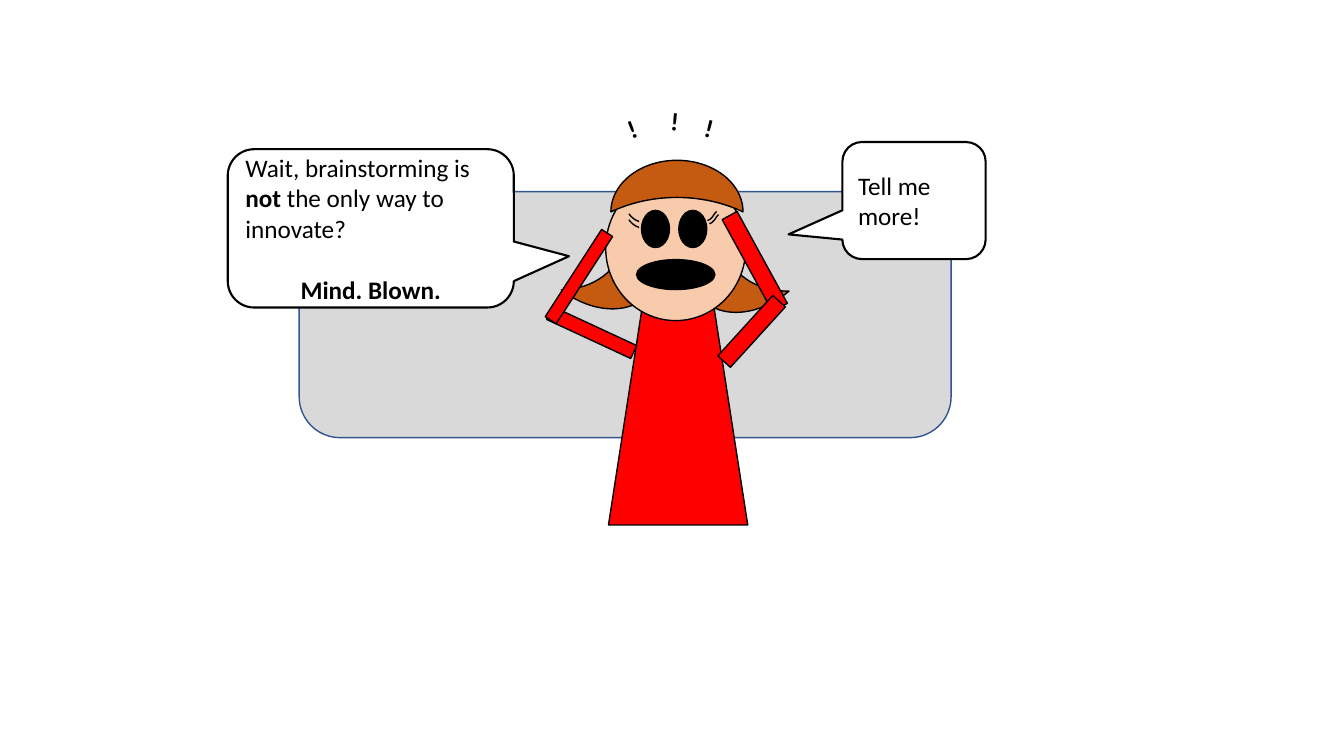
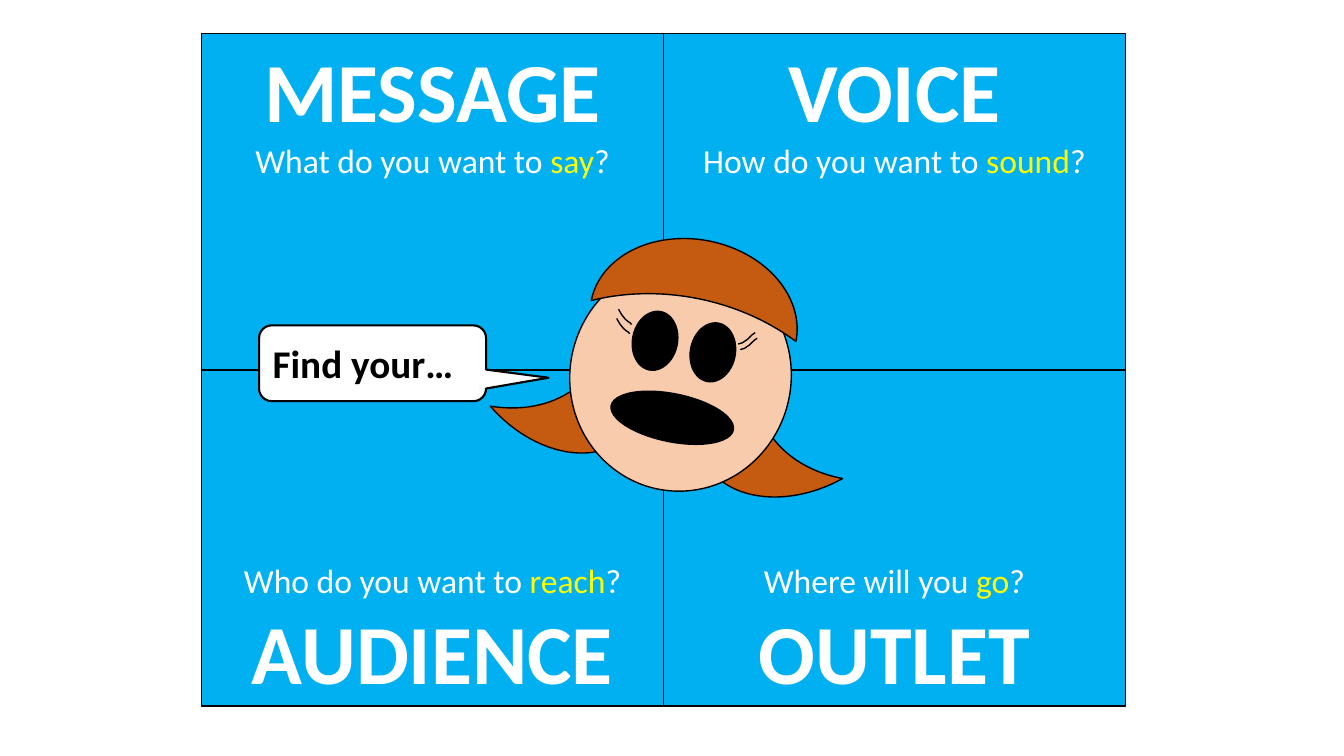
"""Build two cartoon slides: a surprised speaker, and four questions around her head."""
from collections import namedtuple
from math import cos, radians, sin

from pptx import Presentation
from pptx.dml.color import RGBColor
from pptx.enum.shapes import MSO_SHAPE
from pptx.enum.text import MSO_ANCHOR, MSO_AUTO_SIZE, PP_ALIGN
from pptx.util import Cm, Pt

RECT, ROUNDED, OVAL = MSO_SHAPE.RECTANGLE, MSO_SHAPE.ROUNDED_RECTANGLE, MSO_SHAPE.OVAL
MOON, TRAPEZOID = MSO_SHAPE.MOON, MSO_SHAPE.TRAPEZOID
CALLOUT = MSO_SHAPE.ROUNDED_RECTANGULAR_CALLOUT
LEFT, CENTER = PP_ALIGN.LEFT, PP_ALIGN.CENTER
TOP, MIDDLE, BOTTOM = MSO_ANCHOR.TOP, MSO_ANCHOR.MIDDLE, MSO_ANCHOR.BOTTOM
FIT_TEXT = MSO_AUTO_SIZE.SHAPE_TO_FIT_TEXT

BLACK = RGBColor(0x00, 0x00, 0x00)
WHITE = RGBColor(0xFF, 0xFF, 0xFF)
YELLOW = RGBColor(0xFF, 0xFF, 0x00)
RED = RGBColor(0xFF, 0x00, 0x00)
SKY = RGBColor(0x00, 0xB0, 0xF0)
GRAY = RGBColor(0xD9, 0xD9, 0xD9)
NAVY = RGBColor(0x32, 0x54, 0x91)
HAIR = RGBColor(0xC5, 0x5A, 0x11)
SKIN = RGBColor(0xF8, 0xCB, 0xAD)

FONT = "Calibri"
BLANK_LAYOUT = 6

Pose = namedtuple("Pose", "x y scale tilt")
Part = namedtuple("Part", "preset dx dy width height turn fill line adjust")
Run = namedtuple("Run", "text bold color", defaults=(False, BLACK))
Para = namedtuple("Para", "align size before runs")

SHOCKED = Pose(17.03, 6.25, 1, 0)
TILTED = Pose(17.15, 9.49, 1.58, 11.3)

PIGTAILS = [
    Part(MOON, 1.32, 0.67, 1.8, 2.62, 319.7, HAIR, BLACK, [0.625]),
    Part(MOON, -1.37, 0.57, 1.8, 2.62, 217.7, HAIR, BLACK, [0.625]),
]
DRESS = [Part(TRAPEZOID, 0.06, 4.15, 3.51, 5.66, 0, RED, BLACK, [])]
FACE = [Part(OVAL, 0, 0, 3.53, 3.66, 0, SKIN, BLACK, [])]
ARMS = [
    Part(RECT, -2.12, 2.13, 2.34, 0.36, 24.9, RED, BLACK, []),
    Part(RECT, 1.99, 0.34, 2.64, 0.43, 61.3, RED, BLACK, []),
    Part(RECT, 1.91, 2.1, 2.06, 0.43, 132.3, RED, BLACK, []),
    Part(RECT, -2.44, 0.72, 2.62, 0.33, 302.9, RED, BLACK, []),
]
FEATURES = [
    Part(OVAL, -0.51, -0.48, 0.74, 0.97, 0, BLACK, None, []),
    Part(OVAL, 0.43, -0.48, 0.74, 0.97, 0, BLACK, None, []),
    Part(OVAL, 0, 0.67, 2.01, 0.79, 0, BLACK, None, []),
    Part(MOON, 0.03, -1.56, 1.3, 3.33, 90, HAIR, BLACK, [0.72]),
]
RIGHT_CURVE = [(0, 0), (0.06, -0.03), (0.13, -0.1), (0.17, -0.16), (0.2, -0.2), (0.23, -0.23)]
LEFT_CURVE = [(0, 0), (0.06, 0.07), (0.13, 0.13), (0.18, 0.16), (0.23, 0.18), (0.25, 0.2)]
LASHES = [
    (0.85, -0.61, RIGHT_CURVE),
    (0.8, -0.69, RIGHT_CURVE),
    (-1.18, -0.71, LEFT_CURVE),
    (-1.18, -0.86, LEFT_CURVE),
]

BACKDROP = (7.54, 4.83, 16.43, 6.2)
MIND_BLOWN = (
    (5.74, 3.76, 7.21, 3.99), (0.693, 0.176, 0.167),
    [
        Para(LEFT, 18, 0, [Run("Wait, brainstorming is "), Run("not", True),
                           Run(" the only way to innovate?")]),
        Para(CENTER, 18, 22, [Run("Mind. Blown.", True)]),
    ],
)
TELL_ME = (
    (21.23, 3.58, 3.61, 2.95), (-0.876, 0.289, 0.167),
    [Para(LEFT, 18, 0, [Run("Tell me more!")])],
)
FIND_YOUR = (
    (6.53, 8.2, 5.72, 1.91), (0.775, 0.191, 0.167),
    [Para(LEFT, 28, 0, [Run("Find your…", True)])],
)
EXCLAMATIONS = [(17.48, 2.74, 14.3), (16.64, 2.54, 5.2), (15.62, 2.69, 338.8)]
EXCLAMATION_SIZE = (0.94, 1.35)

QUESTIONS = [
    ("MESSAGE", "What do you want to ", "say"),
    ("VOICE", "How do you want to ", "sound"),
    ("AUDIENCE", "Who do you want to ", "reach"),
    ("OUTLET", "Where will you ", "go"),
]
GRID_LEFT, GRID_TOP, CELL_WIDTH, CELL_HEIGHT = 5.08, 0.85, 11.64, 8.47


def write(frame, paragraphs, anchor=MIDDLE):
    """Fill a text frame with formatted paragraphs."""
    frame.word_wrap = True
    frame.vertical_anchor = anchor
    for index, para in enumerate(paragraphs):
        line = frame.add_paragraph() if index else frame.paragraphs[0]
        line.alignment = para.align
        if para.before:
            line.space_before = Pt(para.before)
        for piece in para.runs:
            run = line.add_run()
            run.text = piece.text
            run.font.color.rgb = piece.color
            look = {"name": FONT, "size": Pt(para.size), "bold": piece.bold}
            for key, value in look.items():
                setattr(run.font, key, value)


def add_block(slide, preset, box, fill, line=BLACK, weight=1, adjust=()):
    """Add a filled preset shape at a box given in centimetres."""
    block = slide.shapes.add_shape(preset, *map(Cm, box))
    block.shadow.inherit = False
    block.fill.solid()
    block.fill.fore_color.rgb = fill
    if line is None:
        block.line.fill.background()
    else:
        block.line.color.rgb = line
        block.line.width = Pt(weight)
    for index, value in enumerate(adjust):
        block.adjustments[index] = value
    return block


def place(pose, dx, dy):
    """Return the slide position of an offset from the face centre."""
    angle = radians(pose.tilt)
    return (pose.x + pose.scale * (dx * cos(angle) - dy * sin(angle)),
            pose.y + pose.scale * (dx * sin(angle) + dy * cos(angle)))


def draw_parts(slide, pose, parts):
    """Draw parts of the figure, scaled and tilted by the pose."""
    for part in parts:
        x, y = place(pose, part.dx, part.dy)
        width, height = part.width * pose.scale, part.height * pose.scale
        box = (x - width / 2, y - height / 2, width, height)
        block = add_block(slide, part.preset, box, part.fill, part.line, adjust=part.adjust)
        block.rotation = (part.turn + pose.tilt) % 360


def draw_lashes(slide, pose):
    """Draw the eyelashes as open outlines."""
    for left, top, curve in LASHES:
        points = [tuple(map(Cm, place(pose, left + dx, top + dy))) for dx, dy in curve]
        builder = slide.shapes.build_freeform(*points[0])
        builder.add_line_segments(points[1:], close=False)
        lash = builder.convert_to_shape()
        lash.shadow.inherit = False
        lash.fill.background()
        lash.line.color.rgb = BLACK
        lash.line.width = Pt(1)


def draw_figure(slide, pose, dress=(), arms=()):
    """Draw the figure from back to front."""
    for parts in (PIGTAILS, dress, FACE, arms, FEATURES):
        draw_parts(slide, pose, parts)
    draw_lashes(slide, pose)


def add_speech(slide, box, tail, paragraphs):
    """Add a speech bubble."""
    bubble = add_block(slide, CALLOUT, box, WHITE, weight=1.5, adjust=tail)
    write(bubble.text_frame, paragraphs)


def build_surprise(slide):
    """Build the slide with the shocked figure."""
    add_block(slide, ROUNDED, BACKDROP, GRAY, NAVY)
    draw_figure(slide, SHOCKED, DRESS, ARMS)
    for speech in (MIND_BLOWN, TELL_ME):
        add_speech(slide, *speech)
    for left, top, turn in EXCLAMATIONS:
        mark = slide.shapes.add_textbox(*map(Cm, (left, top, *EXCLAMATION_SIZE)))
        mark.rotation = turn
        write(mark.text_frame, [Para(LEFT, 18, 0, [Run("!", True)])], TOP)
        mark.text_frame.word_wrap = False
        mark.text_frame.auto_size = FIT_TEXT


def build_questions(slide):
    """Build the slide with four questions around the head."""
    for index, (heading, question, keyword) in enumerate(QUESTIONS):
        row, column = divmod(index, 2)
        box = (GRID_LEFT + column * CELL_WIDTH, GRID_TOP + row * CELL_HEIGHT,
               CELL_WIDTH, CELL_HEIGHT)
        cell = add_block(slide, RECT, box, SKY)
        lines = [
            Para(CENTER, 60, 0, [Run(heading, True, WHITE)]),
            Para(CENTER, 24, 0, [Run(question, False, WHITE), Run(keyword, False, YELLOW),
                                 Run("?", False, WHITE)]),
        ]
        write(cell.text_frame, lines[::-1] if row else lines, BOTTOM if row else TOP)
    draw_figure(slide, TILTED)
    add_speech(slide, *FIND_YOUR)


def main():
    """Create and save the presentation."""
    deck = Presentation()
    deck.slide_width, deck.slide_height = Cm(33.87), Cm(19.05)
    for build in (build_surprise, build_questions):
        build(deck.slides.add_slide(deck.slide_layouts[BLANK_LAYOUT]))
    deck.save("out.pptx")


if __name__ == "__main__":
    main()
